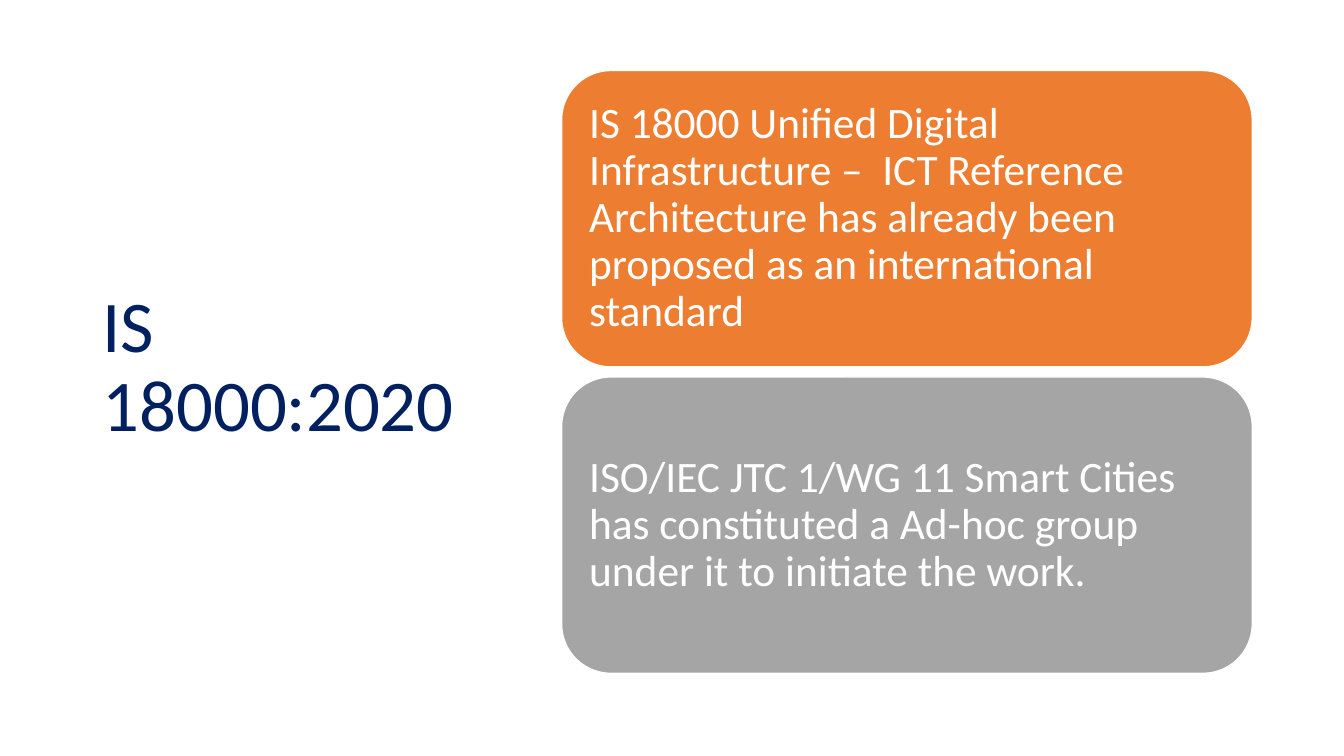
import pptx
import pptx.util
import pptx.dml.color
import pptx.enum.shapes
import pptx.enum.text
from pptx.util import Inches


def color(value):
    """Turn a hex string into a colour."""
    return pptx.dml.color.RGBColor.from_string(value)


class SlideBuilder:
    """Hold the text style and the current slide."""

    font_name = "Calibri"
    line_spacing = 0.9

    def __init__(self, page):
        """Keep the slide to draw on."""
        self.page = page

    def set_text(self, box, text, size, hue, inset):
        """Fill a box with one left-aligned paragraph."""
        frame = box.text_frame
        frame_format = {
            "word_wrap": True,
            "vertical_anchor": pptx.enum.text.MSO_ANCHOR.MIDDLE,
            "margin_left": inset,
            "margin_right": inset,
            "margin_top": inset,
            "margin_bottom": inset,
        }
        for name, value in frame_format.items():
            setattr(frame, name, value)
        para = frame.paragraphs[0]
        para.alignment = pptx.enum.text.PP_ALIGN.LEFT
        para.line_spacing = self.line_spacing
        span = para.add_run()
        span.text = text
        font_format = {"name": self.font_name, "size": pptx.util.Pt(size)}
        for name, value in font_format.items():
            setattr(span.font, name, value)
        span.font.color.rgb = color(hue)

    def title(self, text, left, top, width, height):
        """Add the slide title."""
        box = self.page.shapes.add_textbox(
            Inches(left), Inches(top), Inches(width), Inches(height))
        self.set_text(box, text, 52, "002060", Inches(0.1))

    def card(self, text, fill, left, top, width, height):
        """Add a rounded card with its text."""
        box = self.page.shapes.add_shape(
            pptx.enum.shapes.MSO_SHAPE.ROUNDED_RECTANGLE,
            Inches(left), Inches(top), Inches(width), Inches(height))
        box.shadow.inherit = False
        box.fill.solid()
        box.fill.fore_color.rgb = color(fill)
        box.line.color.rgb = color("FFFFFF")
        box.line.width = pptx.util.Pt(1)
        self.set_text(box, text, 31, "FFFFFF", Inches(0.13))


def main():
    """Build and save the deck."""
    deck = pptx.Presentation()
    deck.slide_width = Inches(13.33)
    deck.slide_height = Inches(7.5)
    builder = SlideBuilder(deck.slides.add_slide(deck.slide_layouts[6]))
    builder.title("IS 18000:2020", 0.92, 0.61, 3.69, 6.09)
    cards = [
        ("IS 18000 Unified Digital Infrastructure –  ICT Reference Architecture "
         "has already been proposed as an international standard", "ED7D31"),
        ("ISO/IEC JTC 1/WG 11 Smart Cities has constituted a Ad-hoc group "
         "under it to initiate the work.", "A5A5A5"),
    ]
    card_height, gap = 2.94, 0.1
    for index, (text, fill) in enumerate(cards):
        top = 0.7 + index * (card_height + gap)
        builder.card(text, fill, 5.57, top, 6.85, card_height)
    deck.save("out.pptx")


if __name__ == "__main__":
    main()
